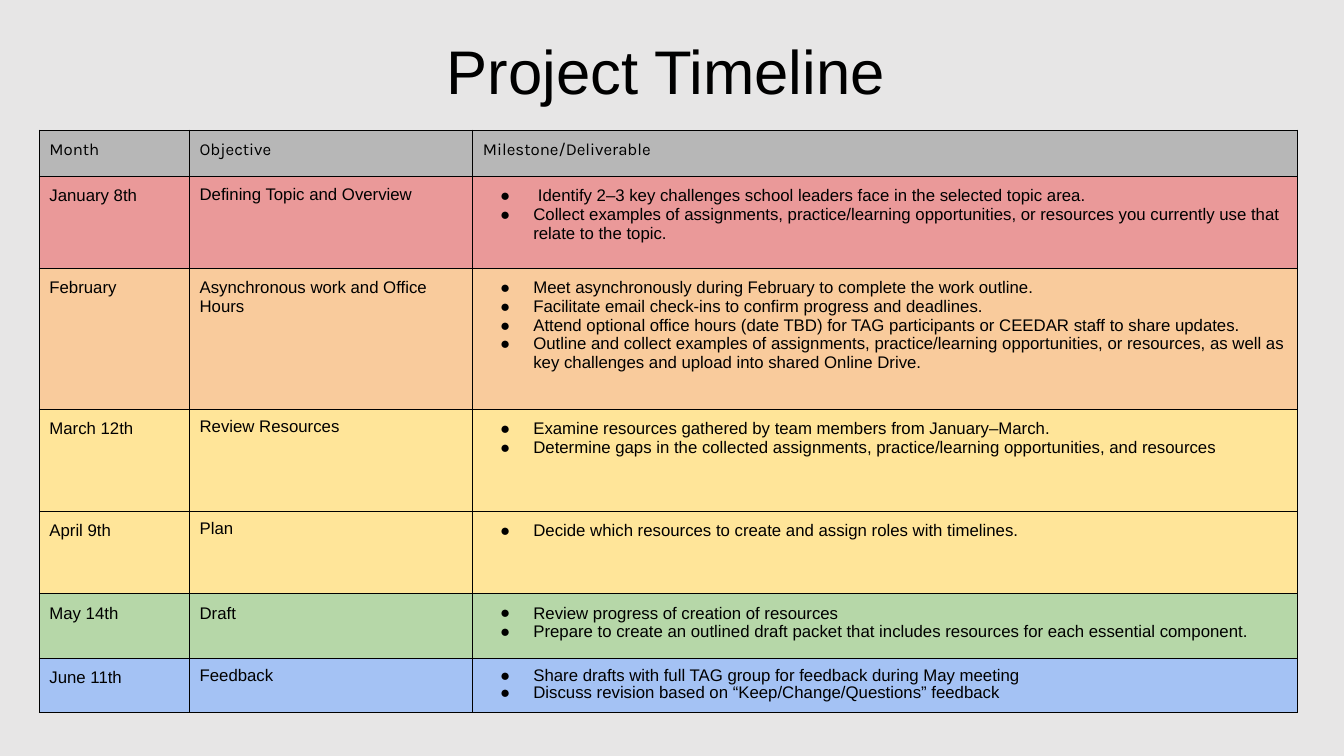
from dataclasses import dataclass

from lxml.etree import SubElement
from pptx import Presentation
from pptx.dml.color import RGBColor
from pptx.enum.text import MSO_ANCHOR, MSO_AUTO_SIZE, PP_ALIGN
from pptx.oxml import parse_xml
from pptx.oxml.ns import nsdecls, qn
from pptx.util import Emu, Inches, Pt


@dataclass(frozen=True)
class Theme:
    back: str = "E7E6E6"
    ink: str = "000000"
    head: str = "B7B7B7"
    red: str = "EA9999"
    orange: str = "F9CB9C"
    yellow: str = "FFE599"
    green: str = "B6D7A8"
    blue: str = "A4C2F4"
    font: str = "Arial"
    label: str = "Karla"
    title: int = 44
    body: int = 12
    rule: float = 0.75
    tight: float = 0.9


@dataclass(frozen=True)
class Stage:
    month: str
    goal: str
    tasks: tuple
    fill: str
    height: float
    goal_gap: float = 1.0
    task_gap: float = 1.0


THEME = Theme()
HEADS = ("Month", "Objective", "Milestone/Deliverable")
COLS = (1.49, 2.81, 8.18)
HEAD_ROW = 0.46
STAGES = (
    Stage("January 8th", "Defining Topic and Overview", (
        " Identify 2–3 key challenges school leaders face in the selected topic area.",
        "Collect examples of assignments, practice/learning opportunities, or resources "
        "you currently use that relate to the topic.",
    ), THEME.red, 0.91, THEME.tight),
    Stage("February", "Asynchronous work and Office Hours", (
        "Meet asynchronously during February to complete the work outline.",
        "Facilitate email check-ins to confirm progress and deadlines.",
        "Attend optional office hours (date TBD) for TAG participants or CEEDAR staff "
        "to share updates.",
        "Outline and collect examples of assignments, practice/learning opportunities, "
        "or resources, as well as key challenges and upload into shared Online Drive.",
    ), THEME.orange, 1.4),
    Stage("March 12th", "Review Resources", (
        "Examine resources gathered by team members from January–March.",
        "Determine gaps in the collected assignments, practice/learning opportunities, "
        "and resources",
    ), THEME.yellow, 1.01, THEME.tight),
    Stage("April 9th", "Plan", (
        "Decide which resources to create and assign roles with timelines.",
    ), THEME.yellow, 0.82, THEME.tight),
    Stage("May 14th", "Draft", (
        "Review progress of creation of resources",
        "Prepare to create an outlined draft packet that includes resources for each "
        "essential component.",
    ), THEME.green, 0.64),
    Stage("June 11th", "Feedback", (
        "Share drafts with full TAG group for feedback during May meeting",
        "Discuss revision based on “Keep/Change/Questions” feedback",
    ), THEME.blue, 0.54, THEME.tight, THEME.tight),
)


def write(para, text, font=THEME.font, size=THEME.body, gap=1.0):
    para.line_spacing = gap
    run = para.add_run()
    run.text = text
    run.font.name = font
    run.font.size = Pt(size)
    run.font.color.rgb = RGBColor.from_string(THEME.ink)


def add_bullet(para):
    props = para._p.get_or_add_pPr()
    props.set("marL", str(Inches(0.5)))
    props.set("indent", str(-Inches(0.33)))
    color = SubElement(props, qn("a:buClr"))
    SubElement(color, qn("a:srgbClr"), val=THEME.ink)
    SubElement(props, qn("a:buFont"), typeface=THEME.font)
    SubElement(props, qn("a:buChar"), char="●")


def style_cell(cell, fill):
    """Set the margins, fill and four border lines of a cell."""
    pad = Inches(0.1)
    cell.margin_left = cell.margin_right = pad
    cell.margin_top = cell.margin_bottom = pad
    cell.fill.solid()
    cell.fill.fore_color.rgb = RGBColor.from_string(fill)
    props = cell._tc.get_or_add_tcPr()
    for spot, side in enumerate("LRTB"):
        props.insert(spot, parse_xml(
            f'<a:ln{side} {nsdecls("a")} w="{Pt(THEME.rule)}"><a:solidFill>'
            f'<a:srgbClr val="{THEME.ink}"/></a:solidFill></a:ln{side}>'))


def fill_cell(cell, lines, fill, font=THEME.font, gap=1.0, bullets=False):
    style_cell(cell, fill)
    frame = cell.text_frame
    for spot, line in enumerate(lines):
        para = frame.add_paragraph() if spot else frame.paragraphs[0]
        if bullets:
            add_bullet(para)
        write(para, line, font, gap=gap)


def add_title(slide, box):
    title = slide.shapes.title
    title.left, title.top, title.width, title.height = box
    frame = title.text_frame
    frame.word_wrap = True
    frame.auto_size = MSO_AUTO_SIZE.NONE
    frame.vertical_anchor = MSO_ANCHOR.MIDDLE
    para = frame.paragraphs[0]
    para.alignment = PP_ALIGN.CENTER
    write(para, "Project Timeline", size=THEME.title, gap=THEME.tight)


def add_plan(slide, box):
    """Place the timeline table, sharing the box out by column and row weights."""
    table = slide.shapes.add_table(len(STAGES) + 1, len(COLS), *box).table
    table.first_row = table.horz_banding = False
    width, height = box[2:]
    rows = [HEAD_ROW] + [stage.height for stage in STAGES]
    for col, part in zip(table.columns, COLS):
        col.width = Emu(int(width * part / sum(COLS)))
    for row, part in zip(table.rows, rows):
        row.height = Emu(int(height * part / sum(rows)))
    for col, head in enumerate(HEADS):
        fill_cell(table.cell(0, col), [head], THEME.head, THEME.label)
    for row, stage in enumerate(STAGES, 1):
        fill_cell(table.cell(row, 0), [stage.month], stage.fill)
        fill_cell(table.cell(row, 1), [stage.goal], stage.fill, gap=stage.goal_gap)
        fill_cell(table.cell(row, 2), stage.tasks, stage.fill,
                  gap=stage.task_gap, bullets=True)


def main():
    deck = Presentation()
    deck.slide_width, deck.slide_height = Inches(13.33), Inches(7.5)
    slide = deck.slides.add_slide(deck.slide_layouts[5])
    slide.background.fill.solid()
    slide.background.fill.fore_color.rgb = RGBColor.from_string(THEME.back)
    add_title(slide, [Inches(n) for n in (0.47, 0.01, 12.27, 1.45)])
    add_plan(slide, [Inches(n) for n in (0.39, 1.29, sum(COLS), 5.78)])
    deck.save("out.pptx")


if __name__ == "__main__":
    main()
